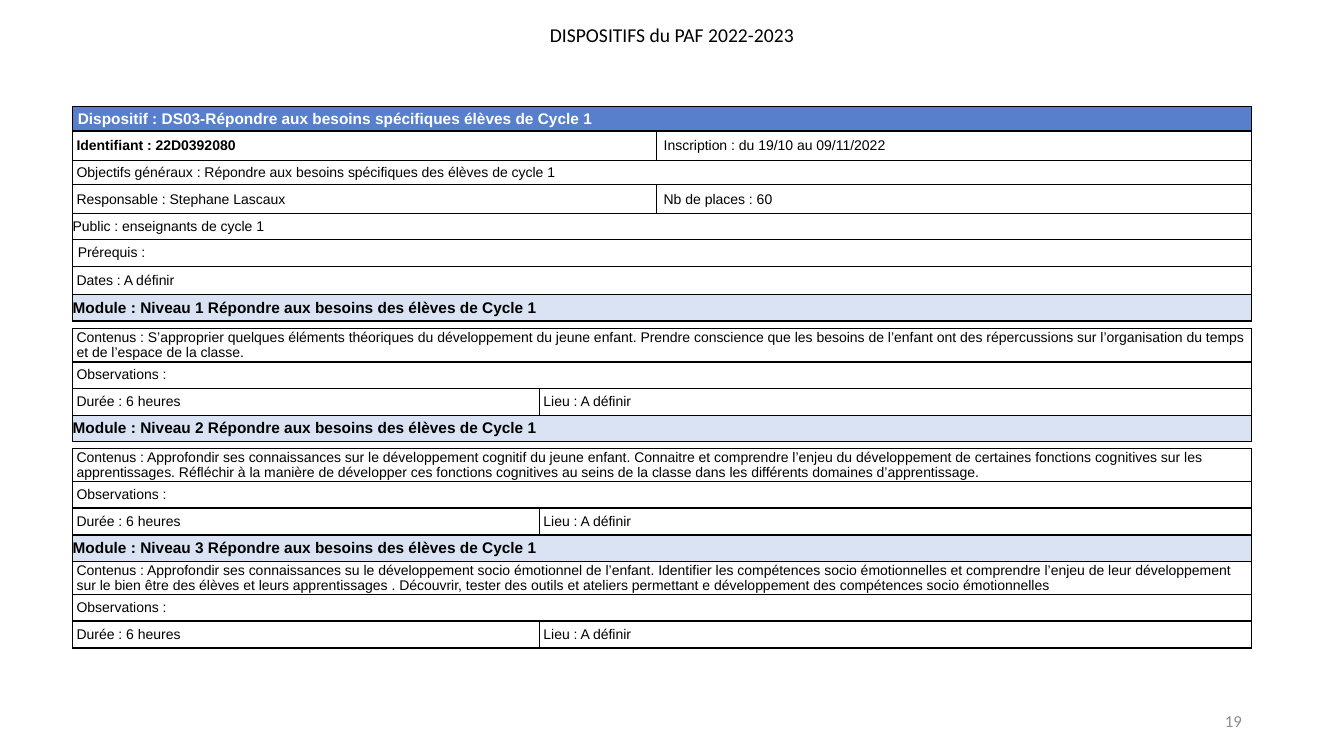
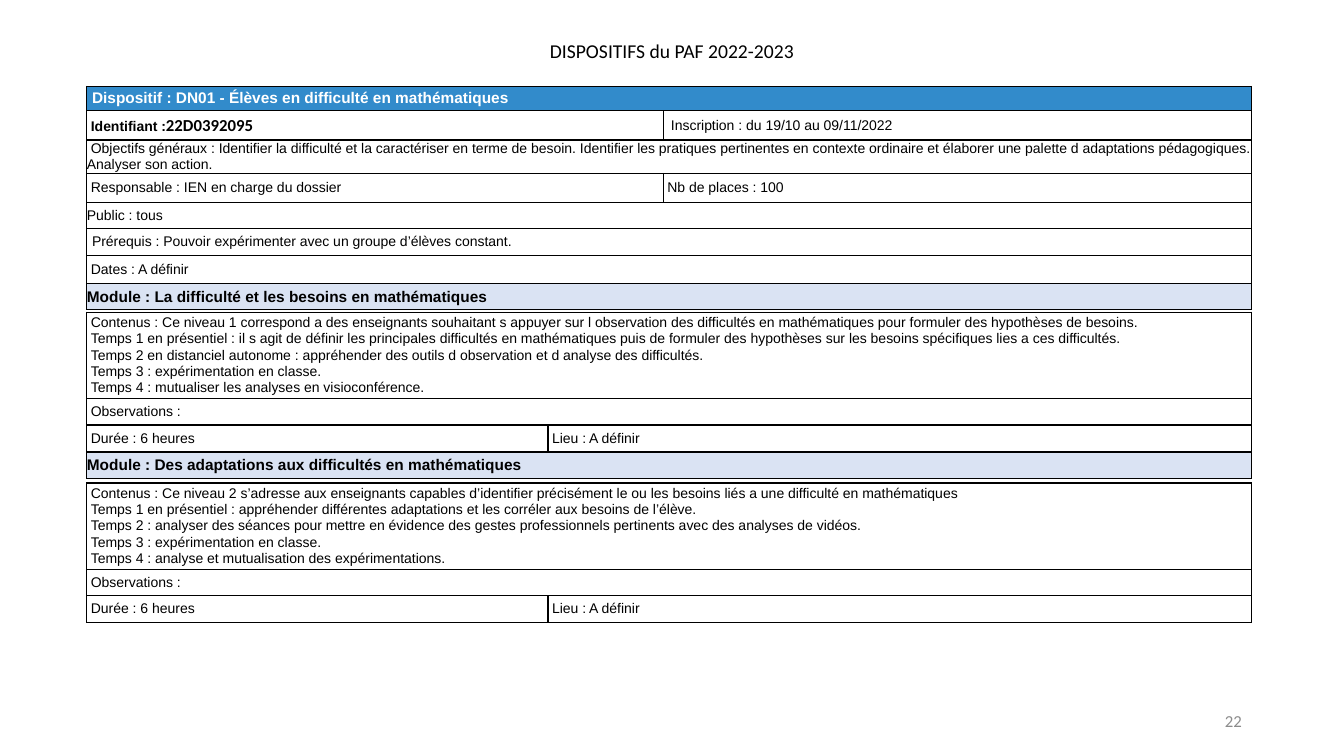
"""Build the two training programme slides, each a stack of bordered tables."""
from lxml import etree
from pptx import Presentation
from pptx.dml.color import RGBColor
from pptx.enum import text
from pptx.oxml import ns
from pptx.util import Cm, Pt

BLACK = RGBColor(0x00, 0x00, 0x00)
WHITE = RGBColor(0xFF, 0xFF, 0xFF)
GREY = RGBColor(0x8C, 0x8C, 0x8C)
PALE_BLUE = RGBColor(0xDA, 0xE3, 0xF3)
ROYAL_BLUE = RGBColor(0x58, 0x7F, 0xCB)
SKY_BLUE = RGBColor(0x32, 0x8B, 0xCB)

TABLE_RIGHT = 31.54
SHEET_SPLIT, MODULE_SPLIT = 0.495, 0.396
GAP = 0.1
WIDE_GAP = 0.19

# kind: height (cm), left margin (cm), space before (pt)
ROWS = {
    "heading": (0.61, 0.13, 0.9),
    "identifier": (0.74, GAP, 2.6),
    "goals": (0.61, GAP, 0.5),
    "long goals": (0.84, 0, 0.2),
    "manager": (0.74, GAP, 2.2),
    "audience": (0.64, 0, 0.5),
    "prerequisite": (0.69, 0.13, 1.4),
    "dates": (0.71, GAP, 1.8),
    "module": (0.66, 0, 2),
    "content": (0.84, GAP, 0.7),
    "steps": (2.18, GAP, 0.8),
    "remarks": (0.66, GAP, 1.4),
    "practical": (0.68, GAP, 1.4),
}

SLIDES = [
    {
        "number": "19", "title_top": 0.46, "left": 1.83, "accent": ROYAL_BLUE,
        "tops": [2.69, 8.28, 11.3, 14.15], "second_gap": WIDE_GAP,
        "sheet": [
            ("heading", "Dispositif : DS03-Répondre aux besoins spécifiques élèves de Cycle 1"),
            ("identifier", "Identifiant : 22D0392080", "Inscription : du 19/10 au 09/11/2022"),
            ("goals", "Objectifs généraux : Répondre aux besoins spécifiques des élèves de cycle 1"),
            ("manager", "Responsable : Stephane Lascaux", "Nb de places : 60"),
            ("audience", "Public : enseignants de cycle 1"),
            ("prerequisite", "Prérequis :"),
            ("dates", "Dates : A définir"),
        ],
        "modules": [
            ("Niveau 1 Répondre aux besoins des élèves de Cycle 1", "content",
             "S’approprier quelques éléments théoriques du développement du jeune enfant. "
             "Prendre conscience que les besoins de l’enfant ont des répercussions sur "
             "l’organisation du temps et de l’espace de la classe."),
            ("Niveau 2 Répondre aux besoins des élèves de Cycle 1", "content",
             "Approfondir ses connaissances sur le développement cognitif du jeune enfant. "
             "Connaitre et comprendre l’enjeu du développement de certaines fonctions cognitives "
             "sur les apprentissages. Réfléchir à la manière de développer ces fonctions cognitives "
             "au seins de la classe dans les différents domaines d’apprentissage."),
            ("Niveau 3 Répondre aux besoins des élèves de Cycle 1", "content",
             "Approfondir ses connaissances su le développement socio émotionnel de l’enfant. "
             "Identifier les compétences socio émotionnelles et comprendre l’enjeu de leur "
             "développement sur le bien être des élèves et leurs apprentissages . Découvrir, tester "
             "des outils et ateliers permettant e développement des compétences socio émotionnelles"),
        ],
    },
    {
        "number": "22", "title_top": 0.86, "left": 2.19, "accent": SKY_BLUE,
        "tops": [2.18, 7.87, 12.17], "second_gap": GAP,
        "sheet": [
            ("heading", "Dispositif : DN01 - Élèves en difficulté en mathématiques"),
            ("identifier", "Identifiant :22D0392095", "Inscription : du 19/10 au 09/11/2022"),
            ("long goals",
             "Objectifs généraux : Identifier la difficulté et la caractériser en terme de besoin. "
             "Identifier les pratiques pertinentes en contexte ordinaire et élaborer une palette "
             "d adaptations pédagogiques. Analyser son action."),
            ("manager", "Responsable : IEN en charge du dossier", "Nb de places : 100"),
            ("audience", "Public : tous"),
            ("prerequisite", "Prérequis : Pouvoir expérimenter avec un groupe d’élèves constant."),
            ("dates", "Dates : A définir"),
        ],
        "modules": [
            ("La difficulté et les besoins en mathématiques", "steps",
             "Ce niveau 1 correspond a des enseignants souhaitant s appuyer sur l observation des "
             "difficultés en mathématiques pour formuler des hypothèses de besoins.\n"
             "Temps 1 en présentiel : il s agit de définir les principales difficultés en "
             "mathématiques puis de formuler des hypothèses sur les besoins spécifiques lies a ces "
             "difficultés.\n"
             "Temps 2 en distanciel autonome : appréhender des outils d observation et d analyse "
             "des difficultés.\n"
             "Temps 3 : expérimentation en classe.\n"
             "Temps 4 : mutualiser les analyses en visioconférence."),
            ("Des adaptations aux difficultés en mathématiques", "steps",
             "Ce niveau 2 s’adresse aux enseignants capables d’identifier précisément le ou les "
             "besoins liés a une difficulté en mathématiques\n"
             "Temps 1 en présentiel : appréhender différentes adaptations et les corréler aux "
             "besoins de l’élève.\n"
             "Temps 2 : analyser des séances pour mettre en évidence des gestes professionnels "
             "pertinents avec des analyses de vidéos.\n"
             "Temps 3 : expérimentation en classe.\n"
             "Temps 4 : analyse et mutualisation des expérimentations."),
        ],
    },
]


def format_cell(cell, kind, margin, accent):
    """Apply the look of a row kind to one cell."""
    cell.margin_left = Cm(margin)
    cell.margin_right = cell.margin_top = cell.margin_bottom = 0
    cell.vertical_anchor = text.MSO_ANCHOR.MIDDLE
    fills = {"heading": accent, "module": PALE_BLUE}
    if kind in fills:
        cell.fill.solid()
        cell.fill.fore_color.rgb = fills[kind]
    else:
        cell.fill.background()
    tc_pr = cell._tc.get_or_add_tcPr()
    for i, side in enumerate(("a:lnL", "a:lnR", "a:lnT", "a:lnB")):
        ln = etree.Element(ns.qn(side), w=str(Pt(1)))
        fill = etree.SubElement(ln, ns.qn("a:solidFill"))
        etree.SubElement(fill, ns.qn("a:srgbClr"), val=str(BLACK))
        tc_pr.insert(i, ln)
    for p in cell.text_frame.paragraphs:
        p.space_before = Pt(ROWS[kind][2])
        if kind == "steps":
            p.line_spacing = 0.97
        if kind == "long goals":
            p.line_spacing = Pt(11.3)
            p._p.get_or_add_pPr().set("indent", str(Cm(GAP)))
        for r in p.runs:
            r.font.name = "Arial"
            r.font.size = Pt(11 if kind in fills else 10)
            r.font.bold = kind in fills
            r.font.color.rgb = WHITE if kind == "heading" else BLACK


def add_grid(s, rows, top, split, spec):
    """Add one table whose single-text rows span both columns."""
    width = TABLE_RIGHT - spec["left"]
    height = sum(ROWS[row[0]][0] for row in rows)
    table = s.shapes.add_table(len(rows), 2, Cm(spec["left"]), Cm(top), Cm(width), Cm(height)).table
    table.first_row = table.horz_banding = False
    table.columns[0].width = Cm(width * split)
    table.columns[1].width = Cm(width * (1 - split))
    for i, (kind, *texts) in enumerate(rows):
        table.rows[i].height = Cm(ROWS[kind][0])
        if len(texts) == 1:
            table.cell(i, 0).merge(table.cell(i, 1))
        for j, content in enumerate(texts):
            table.cell(i, j).text_frame.text = content
        second_margin = {"identifier": WIDE_GAP, "manager": spec["second_gap"]}.get(kind, GAP)
        for j, margin in enumerate((ROWS[kind][1], second_margin)):
            format_cell(table.cell(i, j), kind, margin, spec["accent"])
    return table


prs = Presentation()
prs.slide_width, prs.slide_height = Cm(33.87), Cm(19.05)
layout = prs.slide_layouts[5]
number_holder = [ph for ph in layout.placeholders if ph.placeholder_format.idx == 12][0]

for spec in SLIDES:
    s = prs.slides.add_slide(layout)
    s.shapes.clone_placeholder(number_holder)
    title, number = s.shapes.title, s.placeholders[12]
    title.left, title.top, title.width, title.height = Cm(13.49), Cm(spec["title_top"]), Cm(6.89), Cm(0.86)
    number.left, number.top, number.width, number.height = Cm(23.93), Cm(17.65), Cm(7.62), Cm(1.02)
    for sp, words, size, color, align, anchor in (
        (title, "DISPOSITIFS du PAF 2022-2023", 14, BLACK, text.PP_ALIGN.CENTER, text.MSO_ANCHOR.TOP),
        (number, spec["number"], 12, GREY, text.PP_ALIGN.RIGHT, text.MSO_ANCHOR.MIDDLE),
    ):
        tf = sp.text_frame
        tf.text = words
        tf.word_wrap = sp is number
        tf.auto_size = text.MSO_AUTO_SIZE.NONE
        tf.vertical_anchor = anchor
        p = tf.paragraphs[0]
        p.alignment = align
        r = p.runs[0]
        r.font.name, r.font.size = "Calibri", Pt(size)
        r.font.color.rgb = color

    headers = [("module", f"Module : {name}") for name, _, _ in spec["modules"]]
    sheet = add_grid(s, spec["sheet"] + headers[:1], spec["tops"][0], SHEET_SPLIT, spec)
    p = sheet.cell(1, 0).text_frame.paragraphs[0]
    p.runs[0].font.bold = True
    if spec["number"] == "22":
        label, code = p.runs[0].text.split(":")
        p.runs[0].text = label + ":"
        r = p.add_run()
        r.text = code
        r.font.name, r.font.size, r.font.bold = "Calibri", Pt(12), True
        r.font.color.rgb = BLACK

    for i, (_, kind, content) in enumerate(spec["modules"]):
        rows = [
            (kind, f"Contenus : {content}"),
            ("remarks", "Observations :"),
            ("practical", "Durée : 6 heures", "Lieu : A définir"),
        ]
        add_grid(s, rows + headers[i + 1:i + 2], spec["tops"][i + 1], MODULE_SPLIT, spec)

prs.save("out.pptx")
